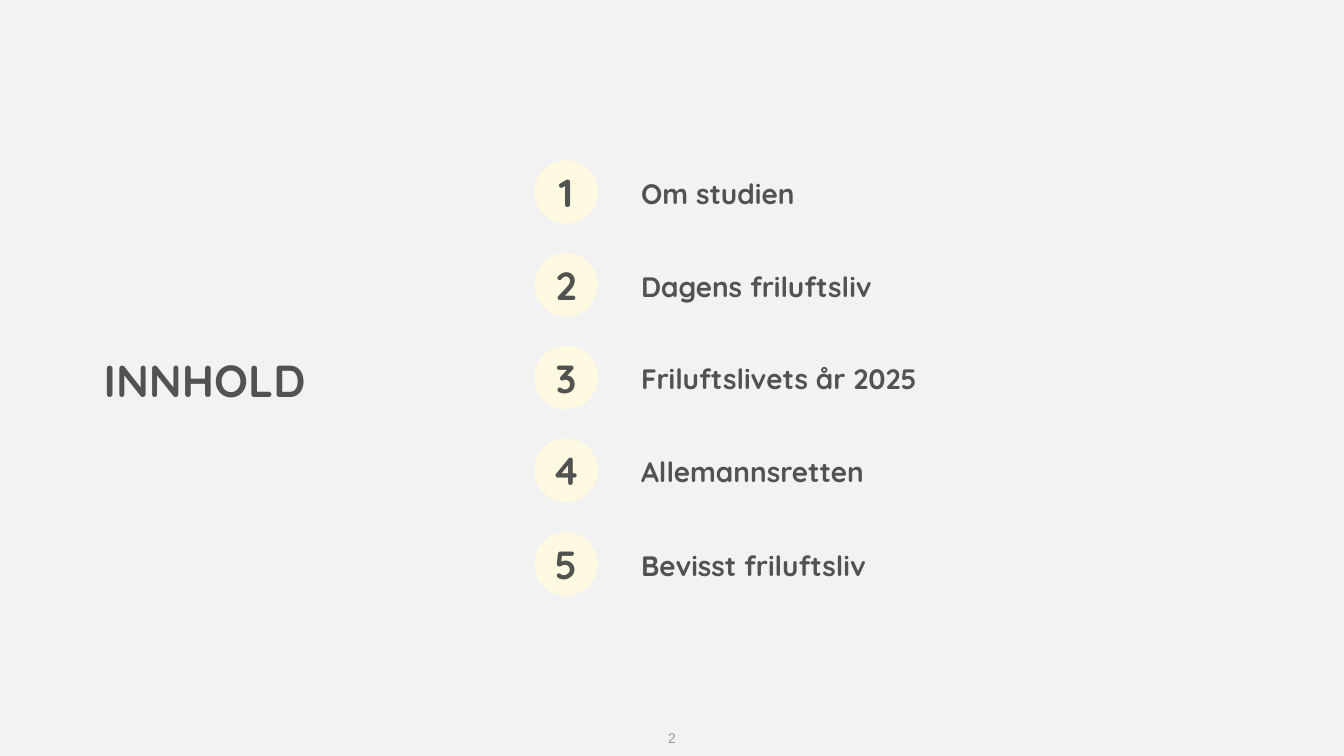
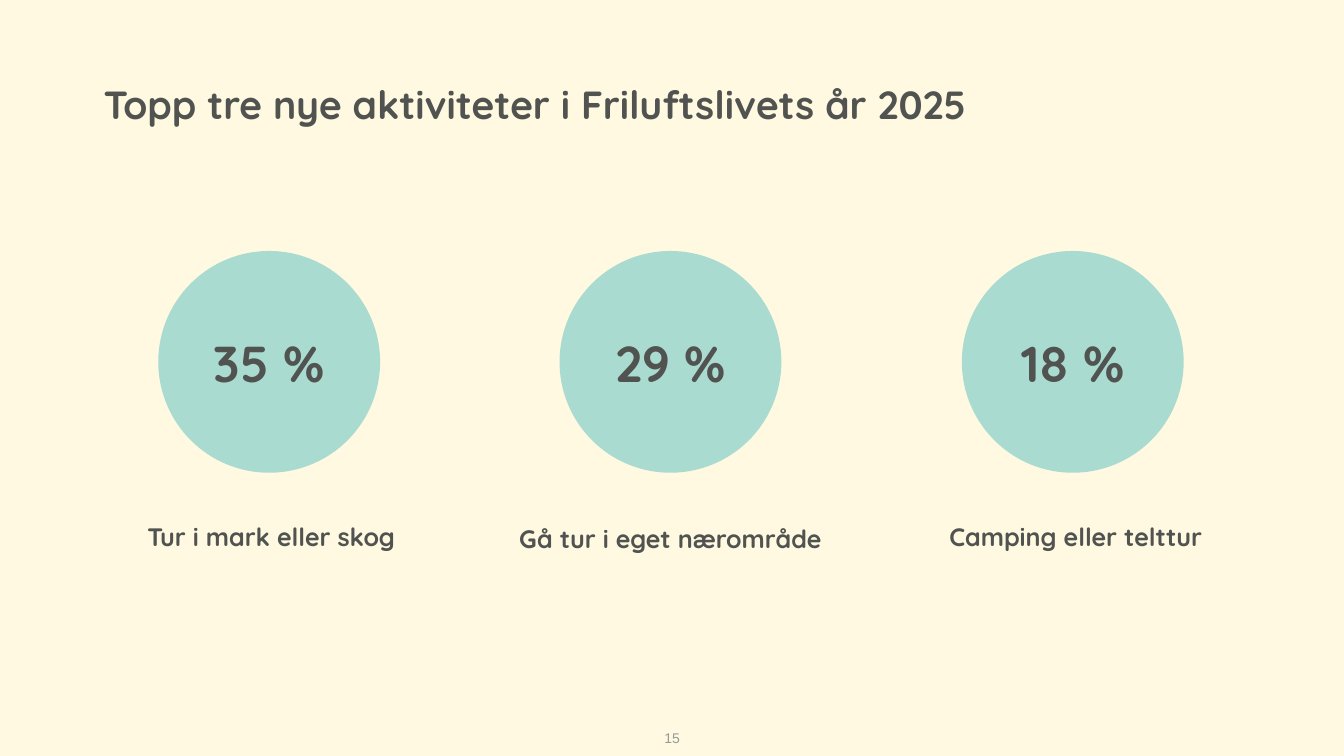
from dataclasses import dataclass

from pptx import Presentation
from pptx.dml.color import RGBColor
from pptx.enum.shapes import MSO_SHAPE
from pptx.enum.text import MSO_ANCHOR, PP_ALIGN
from pptx.util import Pt

OVAL = MSO_SHAPE.OVAL
TOP, MIDDLE, BOTTOM = MSO_ANCHOR.TOP, MSO_ANCHOR.MIDDLE, MSO_ANCHOR.BOTTOM
LEFT, CENTER = PP_ALIGN.LEFT, PP_ALIGN.CENTER
PX = 9144  # EMU per px, 100 px to the inch


@dataclass(frozen=True)
class Theme:
    gray: str = "F2F2F2"
    cream: str = "FEF9E0"
    mint: str = "AADBD1"
    ink: str = "515350"
    muted: str = "989998"
    font: str = "Quicksand"
    footer_font: str = "Arial"
    footer: int = 10
    label: int = 18
    entry: int = 20
    title: int = 28
    heading: int = 32
    figure: int = 36


theme = Theme()
deck = Presentation()
deck.slide_width, deck.slide_height = 1333 * PX, 750 * PX


def add_text(page, text, left, top, width, height, *, size, fill=None,
             color=theme.ink, font=theme.font, bold=True, align=LEFT,
             anchor=TOP, spacing=None):
    """Place text in a plain box, or in a filled circle when fill is given."""
    area = [length * PX for length in (left, top, width, height)]
    if fill:
        box = page.shapes.add_shape(OVAL, *area)
        box.shadow.inherit = False
        box.fill.solid()
        box.fill.fore_color.rgb = RGBColor.from_string(fill)
        box.line.fill.background()
    else:
        box = page.shapes.add_textbox(*area)
    frame = box.text_frame
    frame.word_wrap = True
    frame.vertical_anchor = anchor
    if fill:
        frame.margin_left = frame.margin_right = 0
        frame.margin_top = frame.margin_bottom = 0
    para = frame.paragraphs[0]
    para.alignment = align
    para.line_spacing = spacing
    span = para.add_run()
    span.text = text
    span.font.name = font
    span.font.size = Pt(size)
    span.font.bold = bold
    span.font.color.rgb = RGBColor.from_string(color)


# Shared parts: background, title and page number
pages = []
for background, number, title, title_top, title_size, title_anchor in (
    (theme.gray, "2", "INNHOLD", 334, theme.heading, MIDDLE),
    (theme.cream, "15", "Topp tre nye aktiviteter i Friluftslivets år 2025",
     40, theme.title, BOTTOM),
):
    page = deck.slides.add_slide(deck.slide_layouts[6])
    page.background.fill.solid()
    page.background.fill.fore_color.rgb = RGBColor.from_string(background)
    add_text(page, title, 93, title_top, 1152, 92, size=title_size,
             anchor=title_anchor, spacing=0.9)
    add_text(page, number, 629, 715, 75, 35, size=theme.footer,
             color=theme.muted, font=theme.footer_font, bold=False,
             align=CENTER, anchor=MIDDLE)
    pages.append(page)
contents, activities = pages

# Contents: numbered circles with entries
entries = ("Om studien", "Dagens friluftsliv", "Friluftslivets år 2025",
           "Allemannsretten", "Bevisst friluftsliv")
for index, entry in enumerate(entries):
    top = 159 + 369 * index // 4
    add_text(contents, str(index + 1), 530, top, 63, 63, size=theme.title,
             fill=theme.cream, align=CENTER, anchor=MIDDLE)
    add_text(contents, entry, 626, top + 11, 467, 44, size=theme.entry)

# Activities: share in a circle, label below
shares = (
    ("35 %", "Tur i mark eller skog", 92, 512),
    ("29 %", "Gå tur i eget nærområde", 488, 514),
    ("18 %", "Camping eller telttur", 890, 512),
)
for index, (share, label, label_left, label_top) in enumerate(shares):
    add_text(activities, share, 157 + 797 * index // 2, 249, 220, 220,
             size=theme.figure, fill=theme.mint, align=CENTER, anchor=MIDDLE)
    add_text(activities, label, label_left, label_top, 354, 40,
             size=theme.label, align=CENTER)

deck.save("out.pptx")
